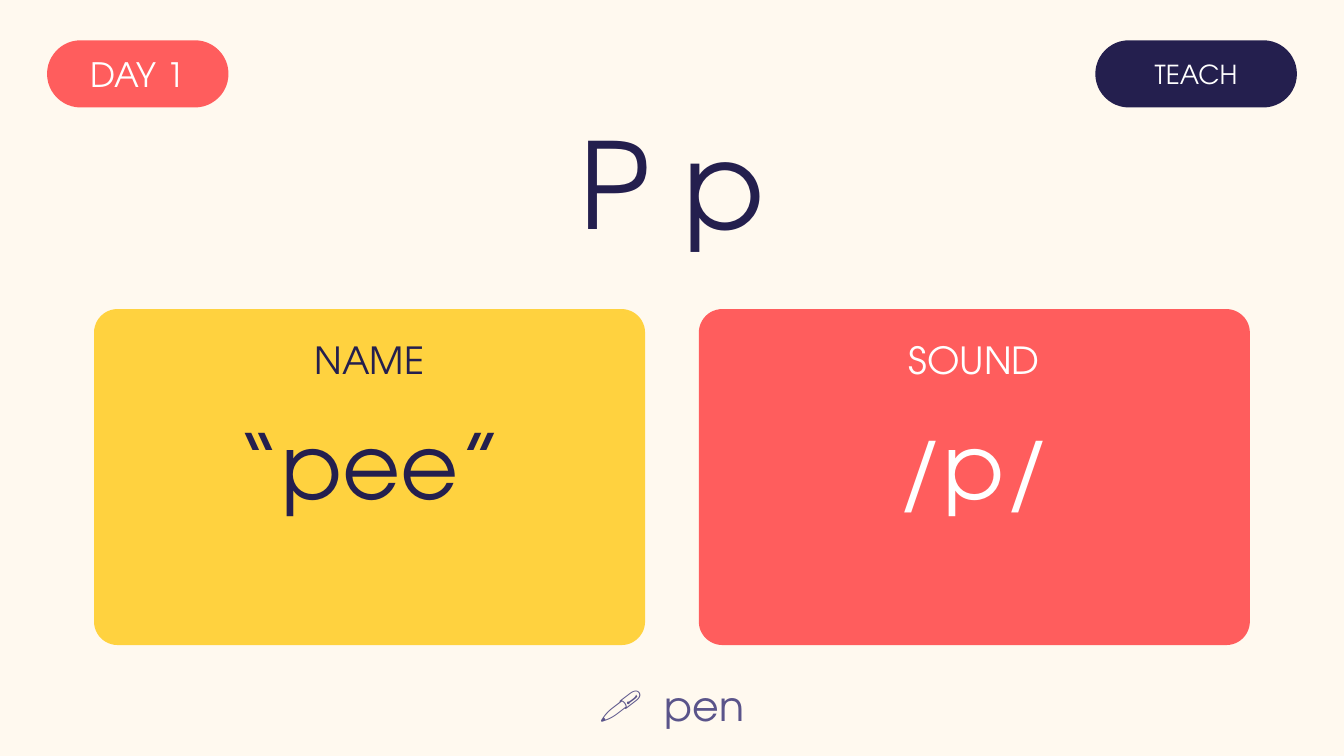
from dataclasses import dataclass

from pptx import Presentation
from pptx.dml.color import RGBColor
from pptx.enum.shapes import MSO_SHAPE as Shape
from pptx.enum.text import MSO_ANCHOR as Anchor, PP_ALIGN as Align
from pptx.util import Inches, Pt


@dataclass(frozen=True)
class Theme:
    font: str = "TeX Gyre Adventor"
    cream: str = "FFF9EF"
    coral: str = "FF5D5D"
    navy: str = "241F4E"
    yellow: str = "FFD23F"
    violet: str = "5A548A"
    white: str = "FFFFFF"
    letter_size: int = 64
    answer_size: int = 48
    example_size: int = 22
    heading_size: int = 20
    day_size: int = 18
    stage_size: int = 14


theme = Theme()
presentation = Presentation()
presentation.slide_width = Inches(10)
presentation.slide_height = presentation.slide_width * 9 // 16
slide = presentation.slides.add_slide(presentation.slide_layouts[6])
slide.background.fill.solid()
slide.background.fill.fore_color.rgb = RGBColor.from_string(theme.cream)

COLUMNS = 200
CELL = presentation.slide_width // COLUMNS


def add_panel(column, row, columns, rows, color, rounding):
    panel = slide.shapes.add_shape(
        Shape.ROUNDED_RECTANGLE, column * CELL, row * CELL, columns * CELL, rows * CELL
    )
    panel.adjustments[0] = rounding
    panel.shadow.inherit = False
    panel.fill.solid()
    panel.fill.fore_color.rgb = RGBColor.from_string(color)
    panel.line.fill.background()


def add_label(column, row, columns, rows, pieces, size, color, inset=2):
    label = slide.shapes.add_textbox(column * CELL, row * CELL, columns * CELL, rows * CELL)
    text_frame = label.text_frame
    text_frame.word_wrap = True
    text_frame.vertical_anchor = Anchor.MIDDLE
    text_frame.margin_left = text_frame.margin_right = inset * CELL
    text_frame.margin_top = text_frame.margin_bottom = inset * CELL // 2
    paragraph = text_frame.paragraphs[0]
    paragraph.alignment = Align.CENTER
    for piece in pieces:
        run = paragraph.add_run()
        run.text = piece
        run.font.name = theme.font
        run.font.size = Pt(size)
        run.font.color.rgb = RGBColor.from_string(color)
    return paragraph


PILL_ROW, PILL_ROWS, PILL_MARGIN = 6, 10, 7
DAY_COLUMNS, STAGE_COLUMNS = 27, 30
pills = [
    (PILL_MARGIN, DAY_COLUMNS, "DAY 1", theme.day_size, theme.coral),
    (COLUMNS - PILL_MARGIN - STAGE_COLUMNS, STAGE_COLUMNS, "TEACH", theme.stage_size, theme.navy),
]
for column, columns, text, size, color in pills:
    add_panel(column, PILL_ROW, columns, PILL_ROWS, color, 0.5)
    add_label(column, PILL_ROW, columns, PILL_ROWS, [text], size, theme.white, inset=0)

add_label(0, 17, COLUMNS, 20, ["P p"], theme.letter_size, theme.navy)

CARD_MARGIN, CARD_GAP, CARD_ROW, CARD_ROWS = 14, 8, 46, 50
CARD_COLUMNS = (COLUMNS - 2 * CARD_MARGIN - CARD_GAP) // 2
cards = [
    ("NAME", "“pee”", theme.yellow, theme.navy),
    ("SOUND", "/p/", theme.coral, theme.white),
]
for index, (heading, answer, fill, ink) in enumerate(cards):
    column = CARD_MARGIN + index * (CARD_COLUMNS + CARD_GAP)
    add_panel(column, CARD_ROW, CARD_COLUMNS, CARD_ROWS, fill, 0.07)
    add_label(column, CARD_ROW + 3, CARD_COLUMNS, 9, [heading], theme.heading_size, ink)
    add_label(column, CARD_ROW + 14, CARD_COLUMNS, 18, [answer], theme.answer_size, ink)

example = add_label(0, 100, COLUMNS, 10, ["🖊️", " ", "pen"], theme.example_size, theme.violet)
example.runs[1].font._element.set("spc", "600")

presentation.save("out.pptx")
